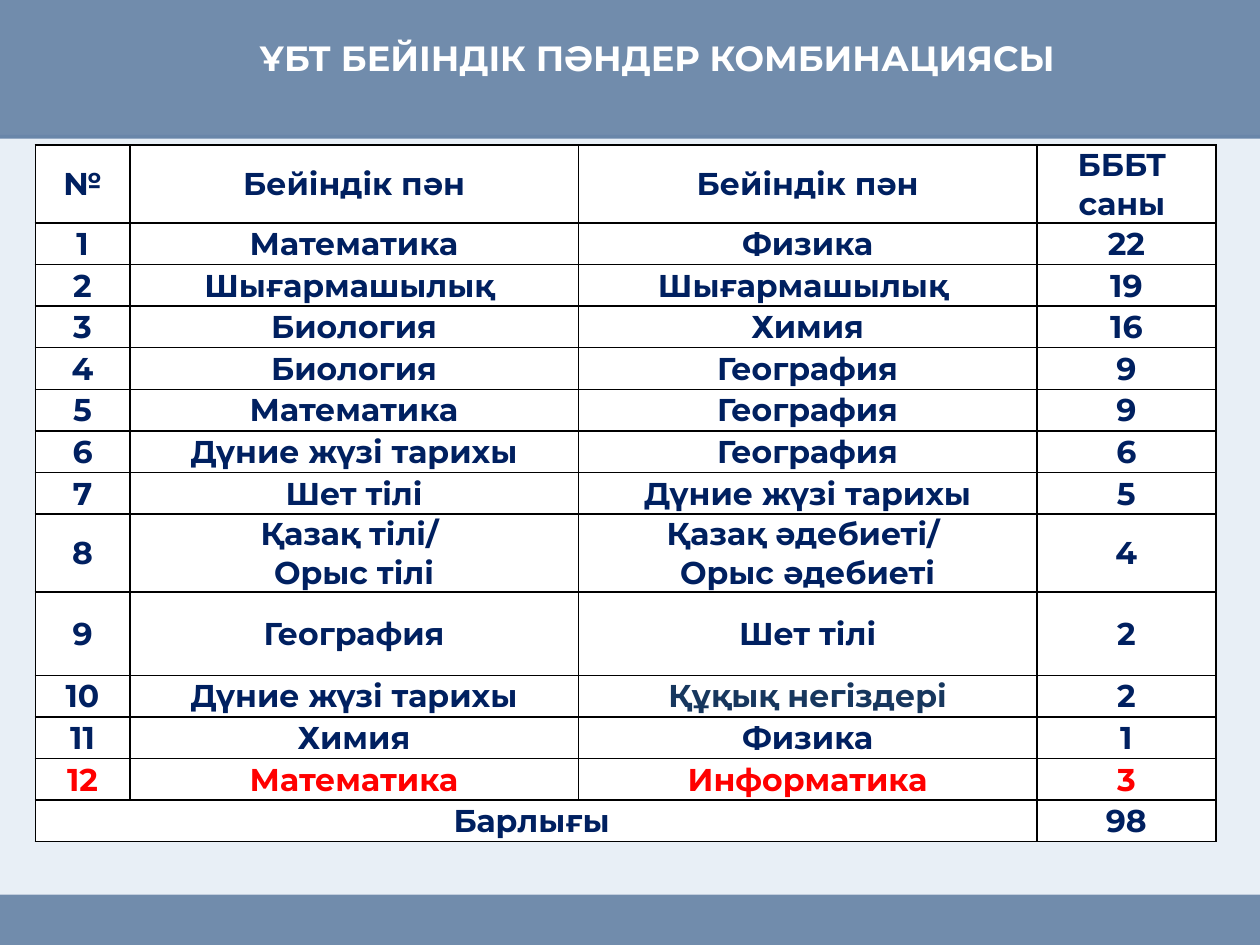
from lxml.etree import SubElement
from pptx import Presentation
from pptx.dml.color import RGBColor
from pptx.enum.shapes import MSO_SHAPE as Preset
from pptx.enum.text import MSO_ANCHOR as Anchor, MSO_AUTO_SIZE as AutoSize, PP_ALIGN as Align
from pptx.oxml.ns import qn
from pptx.util import Inches, Pt

COLORS = {
    "band": "1F497D", "panel": "DCE6F2", "white": "FFFFFF", "black": "000000",
    "navy": "002060", "slate": "17375E", "red": "FF0000",
}
FONT = "Montserrat"
SUBJECTS = [
    ("№", "Бейіндік пән", "Бейіндік пән", "БББТ \nсаны "),
    ("1", "Математика", "Физика", "22"),
    ("2", "Шығармашылық ", "Шығармашылық ", "19"),
    ("3", "Биология", "Химия", "16"),
    ("4", "Биология", "География", "9"),
    ("5", "Математика", "География", "9"),
    ("6", "Дүние жүзі тарихы", "География", "6"),
    ("7", "Шет тілі", "Дүние жүзі тарихы", "5"),
    ("8", "Қазақ тілі/ \nОрыс тілі", "Қазақ әдебиеті/ \nОрыс әдебиеті", "4"),
    ("9", "География", "Шет тілі", "2"),
    ("10", "Дүние жүзі тарихы", "Құқық негіздері", "2"),
    ("11", "Химия", "Физика", "1"),
    ("12", "Математика", "Информатика", "3"),
    ("Барлығы ", "", "", "98"),
]
TOTAL_ROW = len(SUBJECTS) - 1
RED_ROW = TOTAL_ROW - 1
ROW_HEIGHTS = {0: 8.27, 8: 8.27, 9: 8.8}
COLUMN_WIDTHS = [7.5, 35.6, 36.4, 14.2]

deck = Presentation()
deck.slide_width, deck.slide_height = Inches(10), Inches(7.5)
COL, ROW = deck.slide_width / 100, deck.slide_height / 100
page = deck.slides.add_slide(deck.slide_layouts[5])


def add_band(top, height, color):
    band = page.shapes.add_shape(
        Preset.RECTANGLE, 0, int(top * ROW), deck.slide_width, int(height * ROW))
    band.shadow.inherit = False
    band.line.fill.background()
    band.fill.solid()
    band.fill.fore_color.rgb = RGBColor.from_string(COLORS[color])
    tint = band.element.spPr.find(".//" + qn("a:srgbClr"))
    SubElement(tint, qn("a:alpha"), val="63000")
    return band


def add_text(para, text, size, color):
    para.alignment = Align.CENTER
    span = para.add_run()
    span.text = text
    span.font.name, span.font.size, span.font.bold = FONT, Pt(size), True
    span.font.color.rgb = RGBColor.from_string(COLORS[color])


add_band(14.27, 80.4, "panel")
header = add_band(0, 14.67, "band")

title = page.shapes.title
header.element.addnext(title.element)
title.left, title.top = int(6.7 * COL), int(4.4 * ROW)
title.width, title.height = int(90.9 * COL), int(6.93 * ROW)
frame = title.text_frame
frame.auto_size = AutoSize.NONE
frame.word_wrap = True
frame.vertical_anchor = Anchor.TOP
frame.margin_top = frame.margin_bottom = 0
frame.paragraphs[0].line_spacing = 0.9
add_text(frame.paragraphs[0], "ҰБТ БЕЙІНДІК ПӘНДЕР КОМБИНАЦИЯСЫ", 20, "white")

heights = [ROW_HEIGHTS.get(index, 4.4) for index in range(len(SUBJECTS))]
table = page.shapes.add_table(
    len(SUBJECTS), len(COLUMN_WIDTHS), int(2.8 * COL), int(15.33 * ROW),
    int(sum(COLUMN_WIDTHS) * COL), int(sum(heights) * ROW)).table
for column, width in zip(table.columns, COLUMN_WIDTHS):
    column.width = int(width * COL)
for row, height in zip(table.rows, heights):
    row.height = int(height * ROW)
table.cell(TOTAL_ROW, 0).merge(table.cell(TOTAL_ROW, 2))

for row_index, subjects in enumerate(SUBJECTS):
    for column_index, text in enumerate(subjects):
        cell = table.cell(row_index, column_index)
        cell.vertical_anchor = Anchor.MIDDLE
        cell.margin_left = cell.margin_right = cell.margin_top = Inches(0.01)
        cell.margin_bottom = 0
        properties = cell._tc.get_or_add_tcPr()
        for side in ("lnL", "lnR", "lnT", "lnB"):
            border = SubElement(properties, qn("a:" + side), w=str(Pt(1)))
            ink = SubElement(border, qn("a:solidFill"))
            SubElement(ink, qn("a:srgbClr"), val=COLORS["black"])
        cell.fill.solid()
        cell.fill.fore_color.rgb = RGBColor.from_string(COLORS["white"])
        if cell.is_spanned:
            continue
        color = "red" if row_index == RED_ROW else "navy"
        if text == "Құқық негіздері":
            color = "slate"
        for line_index, line in enumerate(text.split("\n")):
            box = cell.text_frame
            para = box.add_paragraph() if line_index else box.paragraphs[0]
            add_text(para, line, 18, color)

add_band(94.67, 5.33, "band")

deck.save("out.pptx")
